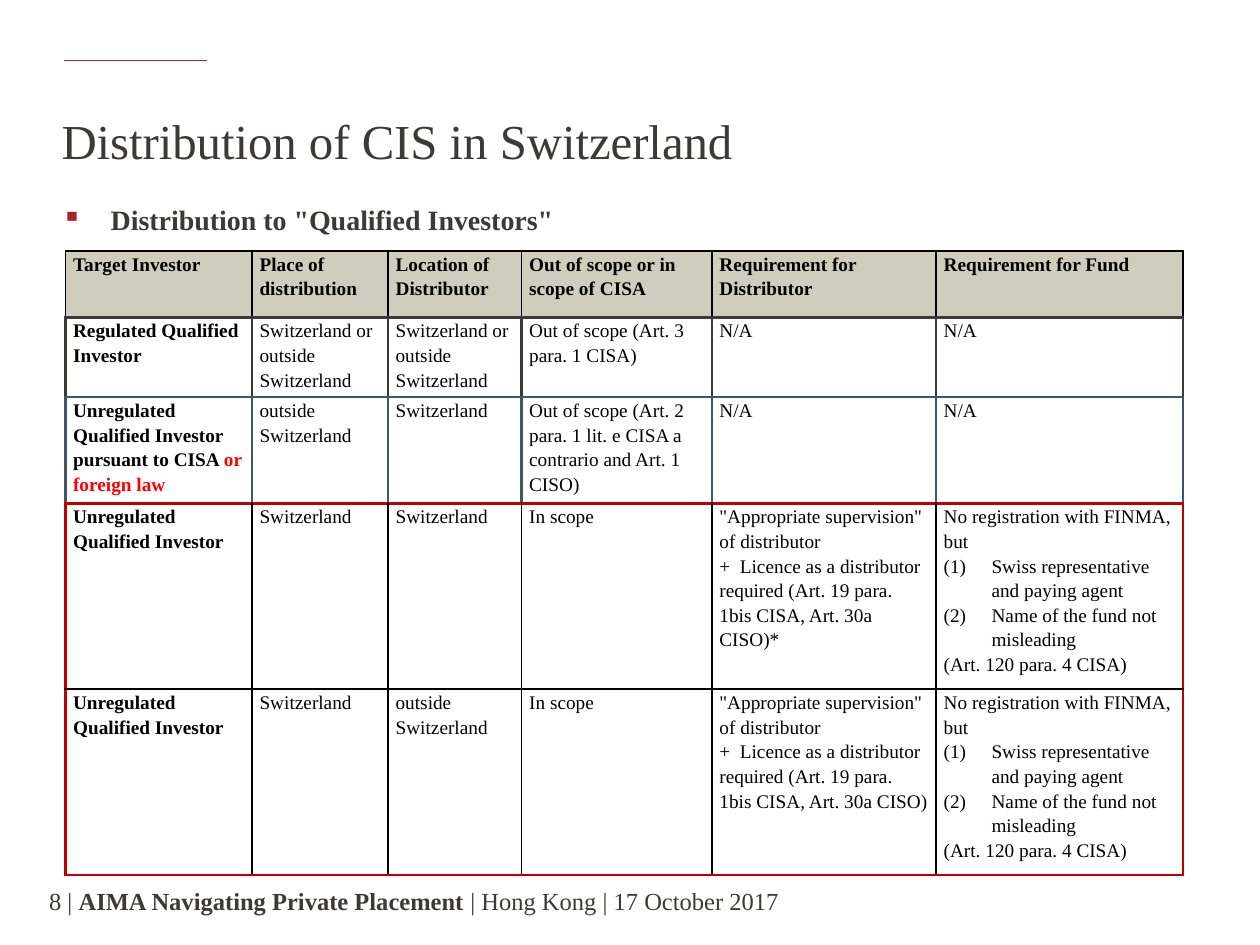
from dataclasses import dataclass

from lxml.etree import SubElement
from pptx import Presentation
from pptx.dml.color import RGBColor
from pptx.enum.shapes import MSO_CONNECTOR
from pptx.enum.text import MSO_ANCHOR
from pptx.oxml.ns import qn
from pptx.util import Inches, Pt


@dataclass(frozen=True)
class Theme:
    font: str = "Times New Roman"
    text: str = "3D3935"
    accent: str = "AB2328"
    header: str = "D1CCBD"
    slate: str = "425563"
    black: str = "000000"
    red: str = "C00000"
    highlight: str = "FF0000"
    title_size: float = 27.9
    body_size: float = 16
    table_size: float = 11
    footer_size: float = 14


THEME = Theme()
THIN = (THEME.black, 1)
DARK = (THEME.text, 1.5)
SLATE = (THEME.slate, 1.5)
RED = (THEME.red, 1.5)

COLUMNS = [1.48, 1.08, 1.06, 1.51, 1.78, 1.96]
ROWS = [0.53, 0.57, 0.77, 1.34, 1.34]
RULES = [THIN, DARK, SLATE, RED, THIN, RED]
SIDES = [THIN, DARK, SLATE, RED, RED]
DIVIDERS = [THIN, DARK, SLATE, THIN, THIN]

SUPERVISION = '"Appropriate supervision" of distributor'
LICENCE = "+  Licence as a distributor required (Art. 19 para. 1bis CISA, Art. 30a CISO)"
FUND = [
    "No registration with FINMA, but",
    "(#)Swiss representative and paying agent",
    "(#)Name of the fund not misleading",
    "(Art. 120 para. 4 CISA)",
]
TABLE = [
    ["Target Investor", "Place of distribution", "Location of Distributor",
     "Out of scope or in scope of CISA", "Requirement for Distributor",
     "Requirement for Fund"],
    ["Regulated Qualified Investor", "Switzerland or outside Switzerland",
     "Switzerland or outside Switzerland", "Out of scope (Art. 3 para. 1 CISA)",
     "N/A", "N/A"],
    ["Unregulated Qualified Investor pursuant to CISA ", "outside Switzerland",
     "Switzerland",
     "Out of scope (Art. 2 para. 1 lit. e CISA a contrario and Art. 1 CISO)",
     "N/A", "N/A"],
    ["Unregulated Qualified Investor", "Switzerland", "Switzerland", "In scope",
     [SUPERVISION, LICENCE + "*"], FUND],
    ["Unregulated Qualified Investor", "Switzerland", "outside Switzerland",
     "In scope", [SUPERVISION, LICENCE], FUND],
]


def add_text(p, text, size, color=THEME.text, bold=False):
    r = p.add_run()
    r.text = text
    r.font.name = THEME.font
    r.font.size = Pt(size)
    r.font.bold = bold
    r.font.color.rgb = RGBColor.from_string(color)
    return r


def add_box(s, left, top, width, height):
    tf = s.shapes.add_textbox(*map(Inches, (left, top, width, height))).text_frame
    tf.word_wrap = True
    return tf


def set_indent(p, indent):
    pPr = p._p.get_or_add_pPr()
    pPr.set("marL", str(Inches(indent)))
    pPr.set("indent", str(Inches(-indent)))
    return pPr


def add_accent_line(s):
    line = s.shapes.add_connector(MSO_CONNECTOR.STRAIGHT, Inches(1.64),
                                  Inches(0.48), Inches(0.51), Inches(0.48))
    line.line.color.rgb = RGBColor.from_string(THEME.accent)
    line.line.width = Pt(1)
    SubElement(line._element.spPr, qn("a:effectLst"))


def add_title(s, text):
    p = add_box(s, 0.39, 0.91, 9.14, 0.78).paragraphs[0]
    p.line_spacing = Pt(27.7)
    add_text(p, text, THEME.title_size)


def add_bullet(s, text):
    p = add_box(s, 0.39, 1.56, 9.14, 4.84).paragraphs[0]
    pPr = set_indent(p, 0.39)
    color = SubElement(pPr, qn("a:buClr"))
    SubElement(color, qn("a:srgbClr"), val=THEME.accent)
    SubElement(pPr, qn("a:buChar"), char="▪")
    p.space_after = Pt(6)
    add_text(p, text, THEME.body_size, bold=True)


def set_borders(cell, **edges):
    tcPr = cell._tc.get_or_add_tcPr()
    for side, (color, width) in edges.items():
        ln = SubElement(tcPr, qn(f"a:ln{side}"), w=str(Pt(width)))
        fill = SubElement(ln, qn("a:solidFill"))
        SubElement(fill, qn("a:srgbClr"), val=color)


def fill_cell(cell, content, bold):
    cell.margin_left = cell.margin_right = Inches(0.06)
    cell.margin_top = cell.margin_bottom = 0
    tf = cell.text_frame
    lines = [content] if isinstance(content, str) else content
    for i, text in enumerate(lines):
        p = tf.paragraphs[0] if i == 0 else tf.add_paragraph()
        if text.startswith("(#)"):
            SubElement(set_indent(p, 0.38), qn("a:buAutoNum"), type="arabicParenBoth")
        p.line_spacing = 1.15
        add_text(p, text.removeprefix("(#)"), THEME.table_size, THEME.black, bold)


def add_investor_table(s):
    table = s.shapes.add_table(len(ROWS), len(COLUMNS), Inches(0.52), Inches(1.99),
                               Inches(sum(COLUMNS)), Inches(sum(ROWS))).table
    table.first_row = table.horz_banding = False
    for column, width in zip(table.columns, COLUMNS):
        column.width = Inches(width)
    for i, (row, height) in enumerate(zip(table.rows, ROWS)):
        row.height = Inches(height)
        edges = [SIDES[i]] + [DIVIDERS[i]] * (len(COLUMNS) - 1) + [SIDES[i]]
        for j, cell in enumerate(row.cells):
            fill_cell(cell, TABLE[i][j], bold=i == 0 or j == 0)
            set_borders(cell, L=edges[j], R=edges[j + 1], T=RULES[i], B=RULES[i + 1])
            if i == 0:
                cell.fill.solid()
                cell.fill.fore_color.rgb = RGBColor.from_string(THEME.header)
            else:
                cell.fill.background()
    add_text(table.cell(2, 0).text_frame.paragraphs[0], "or foreign law",
             THEME.table_size, THEME.highlight, bold=True)


def add_footer(s):
    tf = add_box(s, 0.39, 7.03, 6.34, 0.23)
    tf.margin_left = tf.margin_top = tf.margin_bottom = 0
    tf.vertical_anchor = MSO_ANCHOR.MIDDLE
    p = tf.paragraphs[0]
    add_text(p, "8 | ", THEME.footer_size)
    add_text(p, "AIMA Navigating Private Placement ", THEME.footer_size, bold=True)
    add_text(p, "| Hong Kong | 17 October 2017", THEME.footer_size)


def main():
    prs = Presentation()
    prs.slide_width, prs.slide_height = Inches(10), Inches(7.5)
    s = prs.slides.add_slide(prs.slide_layouts[6])
    add_accent_line(s)
    add_title(s, "Distribution of CIS in Switzerland")
    add_bullet(s, 'Distribution to "Qualified Investors"')
    add_investor_table(s)
    add_footer(s)
    prs.save("out.pptx")


if __name__ == "__main__":
    main()
